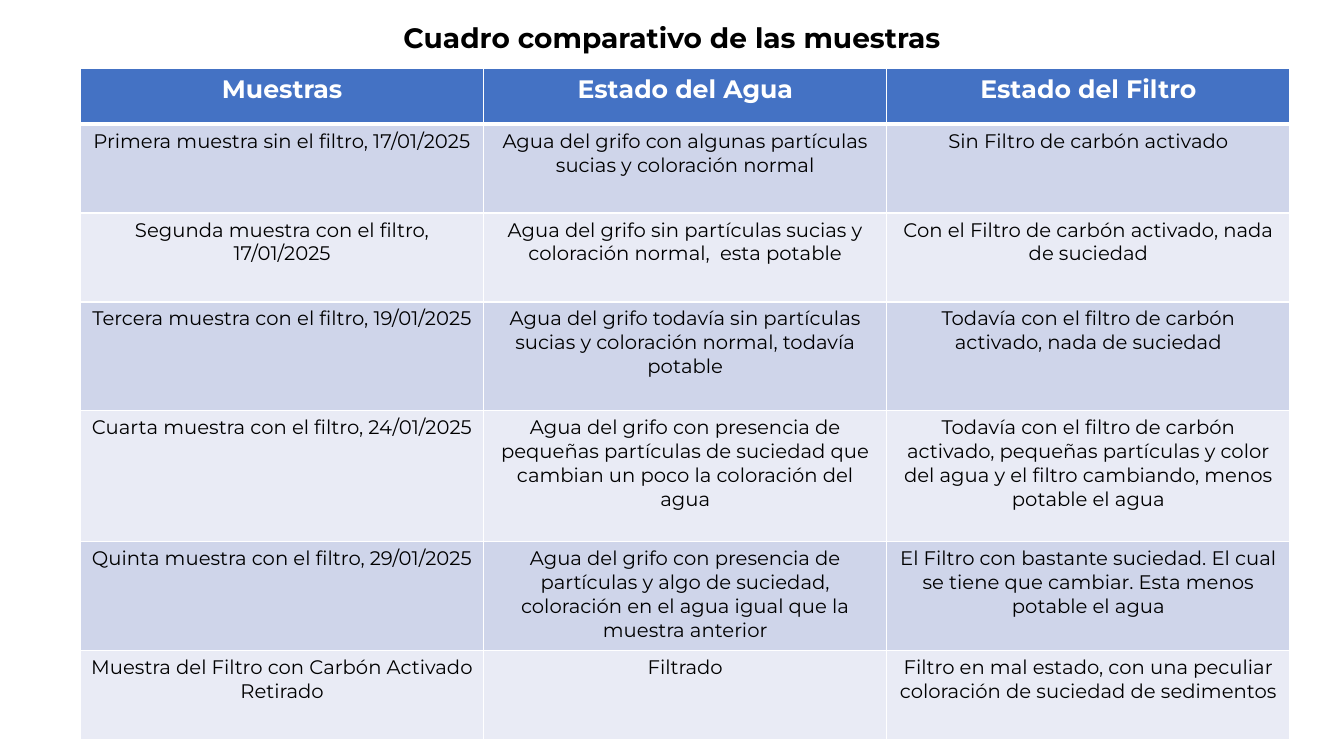
from lxml import etree
from pptx import Presentation
from pptx import util as u
from pptx.dml import color
from pptx.enum import text
from pptx.oxml import ns

FONT = "Montserrat"
TITLE_FORMAT = {"name": FONT, "size": u.Pt(20), "bold": True}
HEADER_FORMAT = {"name": FONT, "size": u.Pt(18), "bold": True}
BODY_FORMAT = {"name": FONT, "size": u.Pt(14), "bold": False}

HEADER_FILL = "4472C4"
BAND_FILLS = ["CFD5EA", "E9EBF5"]
WHITE, BLACK = "FFFFFF", "000000"

COLUMN_WIDTH = 10.16
ROW_HEIGHTS = [1.4, 2.24, 2.24, 2.74, 3.3, 2.74, 2.24]
ROWS = [
    ["Muestras", "Estado del Agua", "Estado del Filtro"],
    ["Primera muestra sin el filtro, 17/01/2025",
     "Agua del grifo con algunas partículas sucias y coloración normal",
     "Sin Filtro de carbón activado"],
    ["Segunda muestra con el filtro, 17/01/2025",
     "Agua del grifo sin partículas sucias y coloración normal,  esta potable",
     "Con el Filtro de carbón activado, nada de suciedad"],
    ["Tercera muestra con el filtro, 19/01/2025",
     "Agua del grifo todavía sin partículas sucias y coloración normal, todavía potable",
     "Todavía con el filtro de carbón activado, nada de suciedad"],
    ["Cuarta muestra con el filtro, 24/01/2025",
     "Agua del grifo con presencia de pequeñas partículas de suciedad que cambian "
     "un poco la coloración del agua",
     "Todavía con el filtro de carbón activado, pequeñas partículas y color del agua "
     "y el filtro cambiando, menos potable el agua"],
    ["Quinta muestra con el filtro, 29/01/2025",
     "Agua del grifo con presencia de partículas y algo de suciedad, coloración en el "
     "agua igual que la muestra anterior",
     "El Filtro con bastante suciedad. El cual se tiene que cambiar. Esta menos "
     "potable el agua"],
    ["Muestra del Filtro con Carbón Activado Retirado",
     "Filtrado",
     "Filtro en mal estado, con una peculiar coloración de suciedad de sedimentos"],
]


def rgb(value):
    return color.RGBColor.from_string(value)


def write_text(tf, words, font_format, font_color):
    p = tf.paragraphs[0]
    p.alignment = text.PP_ALIGN.CENTER
    r = p.add_run()
    r.text = words
    for name, value in font_format.items():
        setattr(r.font, name, value)
    r.font.color.rgb = rgb(font_color)


def set_borders(cell, widths):
    """Add white borders; they must come before the fill in the cell properties."""
    tcPr = cell._tc.get_or_add_tcPr()
    for side, width in widths.items():
        ln = etree.SubElement(tcPr, ns.qn(f"a:ln{side}"), w=str(u.Pt(width)))
        fill = etree.SubElement(ln, ns.qn("a:solidFill"))
        etree.SubElement(fill, ns.qn("a:srgbClr"), val=WHITE)


def add_title(s, words):
    sp = s.shapes.title
    sp.left, sp.top, sp.width, sp.height = u.Cm(0), u.Cm(0.38), u.Cm(33.87), u.Cm(1.12)
    tf = sp.text_frame
    tf.word_wrap = True
    tf.auto_size = text.MSO_AUTO_SIZE.SHAPE_TO_FIT_TEXT
    tf.vertical_anchor = text.MSO_ANCHOR.TOP
    write_text(tf, words, TITLE_FORMAT, BLACK)


def add_comparison_table(s):
    columns = len(ROWS[0])
    table = s.shapes.add_table(
        len(ROWS), columns, u.Cm(2.03), u.Cm(1.73),
        u.Cm(COLUMN_WIDTH * columns), u.Cm(sum(ROW_HEIGHTS))).table
    for column in table.columns:
        column.width = u.Cm(COLUMN_WIDTH)
    for i, (row_words, height) in enumerate(zip(ROWS, ROW_HEIGHTS)):
        table.rows[i].height = u.Cm(height)
        header = i == 0
        fill = HEADER_FILL if header else BAND_FILLS[(i - 1) % 2]
        # The rule under the header is thicker than the others
        borders = {"L": 1, "R": 1, "T": 3 if i == 1 else 1, "B": 3 if header else 1}
        for cell, words in zip(table.rows[i].cells, row_words):
            set_borders(cell, borders)
            cell.fill.solid()
            cell.fill.fore_color.rgb = rgb(fill)
            write_text(cell.text_frame, words,
                       HEADER_FORMAT if header else BODY_FORMAT,
                       WHITE if header else BLACK)


def main():
    prs = Presentation()
    prs.slide_width, prs.slide_height = u.Cm(33.87), u.Cm(19.05)
    s = prs.slides.add_slide(prs.slide_layouts.get_by_name("Title Only"))

    # Heading
    add_title(s, "Cuadro comparativo de las muestras")

    # Samples compared by water and filter condition
    add_comparison_table(s)

    prs.save("out.pptx")


if __name__ == "__main__":
    main()
